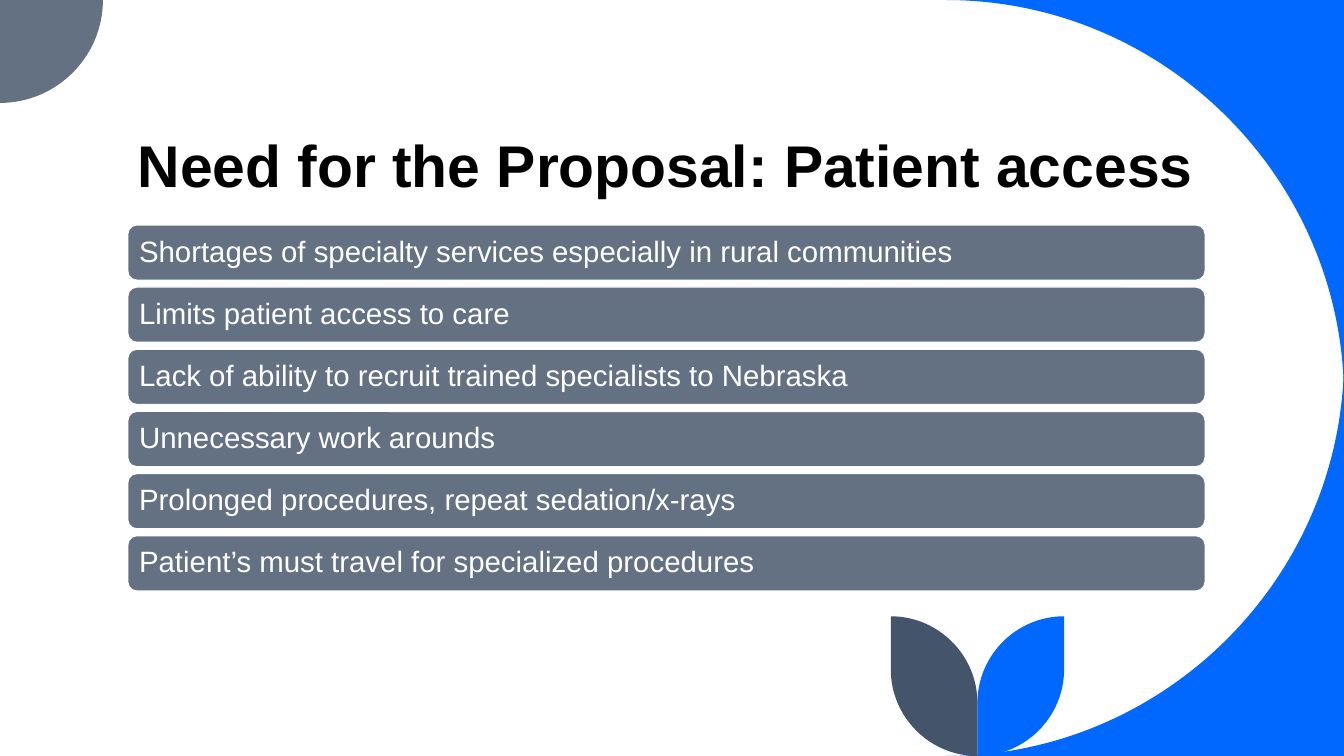
from lxml import etree
from pptx import Presentation
from pptx.dml.color import RGBColor
from pptx.enum.shapes import MSO_SHAPE
from pptx.enum.text import MSO_ANCHOR, MSO_AUTO_SIZE, PP_ALIGN
from pptx.oxml.ns import qn
from pptx.util import Pt

ROUNDED = MSO_SHAPE.ROUNDED_RECTANGLE
LEFT = PP_ALIGN.LEFT
MIDDLE, BOTTOM = MSO_ANCHOR.MIDDLE, MSO_ANCHOR.BOTTOM
NO_AUTOFIT = MSO_AUTO_SIZE.NONE

BLUE = RGBColor(0x00, 0x68, 0xFF)
SLATE = RGBColor(0x63, 0x71, 0x83)
NAVY = RGBColor(0x44, 0x54, 0x6A)
WHITE = RGBColor(0xFF, 0xFF, 0xFF)
BLACK = RGBColor(0x00, 0x00, 0x00)

FONT = "Arial"
SLIDE_W, SLIDE_H = 960, 540
CONTENT_LEFT, CONTENT_W = 91.2, 769.7
BAR_TOP, BAR_H, BAR_PITCH = 160.6, 39.6, 44.4
SWEEP_R, CORNER_R = 284.4, 73.5
LEAF_X, LEAF_TOP, LEAF_R = 698.2, 440.2, 61.9
ARC_PULL = 0.55

NEEDS = [
    "Shortages of specialty services especially in rural communities",
    "Limits patient access to care",
    "Lack of ability to recruit trained specialists to Nebraska",
    "Unnecessary work arounds",
    "Prolonged procedures, repeat sedation/x-rays",
    "Patient’s must travel for specialized procedures",
]


def quarter(start, corner, end):
    """Curve segment for a quarter circle bulging towards a corner."""
    controls = [tuple(p + ARC_PULL * (c - p) for p, c in zip(point, corner))
                for point in (start, end)]
    return [*controls, end]


def add_outline(slide, start, segments, color):
    """Segments hold one point for a line, three for a curve."""
    points = [(Pt(x), Pt(y)) for segment in segments for x, y in segment]
    builder = slide.shapes.build_freeform(Pt(start[0]), Pt(start[1]))
    builder.add_line_segments(points, close=True)
    outline = builder.convert_to_shape()
    outline.shadow.inherit = False
    outline.fill.solid()
    outline.fill.fore_color.rgb = color
    outline.line.fill.background()

    # Join the points of each curve into one Bézier segment
    lines = iter(outline.element.xpath(".//a:lnTo"))
    for segment in segments:
        steps = [next(lines) for _ in segment]
        if len(steps) == 3:
            curve = etree.Element(qn("a:cubicBezTo"))
            steps[0].addprevious(curve)
            for step in steps:
                curve.append(step[0])
                step.getparent().remove(step)


def add_leaf(slide, side, color):
    """A leaf on the left (-1) or right (1) of the stem."""
    outer_x = LEAF_X + side * LEAF_R
    tip, stem = (outer_x, LEAF_TOP), (LEAF_X, SLIDE_H)
    edge = (outer_x, SLIDE_H - LEAF_R)
    inner = (LEAF_X, LEAF_TOP + LEAF_R)
    add_outline(slide, tip, [
        [edge], quarter(edge, (outer_x, SLIDE_H), stem),
        [inner], quarter(inner, (LEAF_X, LEAF_TOP), tip)], color)


def add_sweep(slide, corner_y, middle_y):
    """Blue area between a slide corner and the large circle."""
    corner = (SLIDE_W, corner_y)
    arc_start, arc_end = (SLIDE_W - SWEEP_R, corner_y), (SLIDE_W, middle_y)
    add_outline(slide, corner,
                [[arc_start], quarter(arc_start, corner, arc_end)], BLUE)


def set_text(frame, text, size, color, anchor, spacing, bold=False):
    frame.word_wrap = True
    frame.auto_size = NO_AUTOFIT
    frame.vertical_anchor = anchor
    paragraph = frame.paragraphs[0]
    paragraph.alignment = LEFT
    paragraph.line_spacing = spacing
    run = paragraph.add_run()
    run.text = text
    run.font.name = FONT
    run.font.size = Pt(size)
    run.font.bold = bold
    run.font.color.rgb = color


def add_title(slide, text):
    title = slide.shapes.title
    title.left, title.top = Pt(CONTENT_LEFT), Pt(7.9)
    title.width, title.height = Pt(CONTENT_W), Pt(137.5)
    set_text(title.text_frame, text, 42, BLACK, BOTTOM, 0.8, bold=True)


def add_need_bar(slide, top, text):
    bar = slide.shapes.add_shape(
        ROUNDED, Pt(CONTENT_LEFT), Pt(top), Pt(CONTENT_W), Pt(BAR_H))
    bar.shadow.inherit = False
    bar.fill.solid()
    bar.fill.fore_color.rgb = SLATE
    bar.line.color.rgb = WHITE
    bar.line.width = Pt(1)
    frame = bar.text_frame
    frame.margin_left = frame.margin_right = Pt(6.2)
    set_text(frame, text, 21, WHITE, MIDDLE, 0.9)


def main():
    deck = Presentation()
    deck.slide_width, deck.slide_height = Pt(SLIDE_W), Pt(SLIDE_H)
    slide = deck.slides.add_slide(deck.slide_layouts[5])

    # Blue sweep on the right edge
    add_sweep(slide, 0, SWEEP_R)
    add_sweep(slide, SLIDE_H, SLIDE_H - SWEEP_R)

    # Quarter circle in the top left corner
    right, bottom = (CORNER_R, 0), (0, CORNER_R)
    add_outline(slide, (0, 0), [
        [right], quarter(right, (CORNER_R, CORNER_R), bottom)], SLATE)

    # Pair of leaves at the bottom
    add_leaf(slide, 1, BLUE)
    add_leaf(slide, -1, NAVY)

    # Title and list of needs
    add_title(slide, "Need for the Proposal: Patient access")
    for i, need in enumerate(NEEDS):
        add_need_bar(slide, BAR_TOP + i * BAR_PITCH, need)

    deck.save("out.pptx")


if __name__ == "__main__":
    main()
